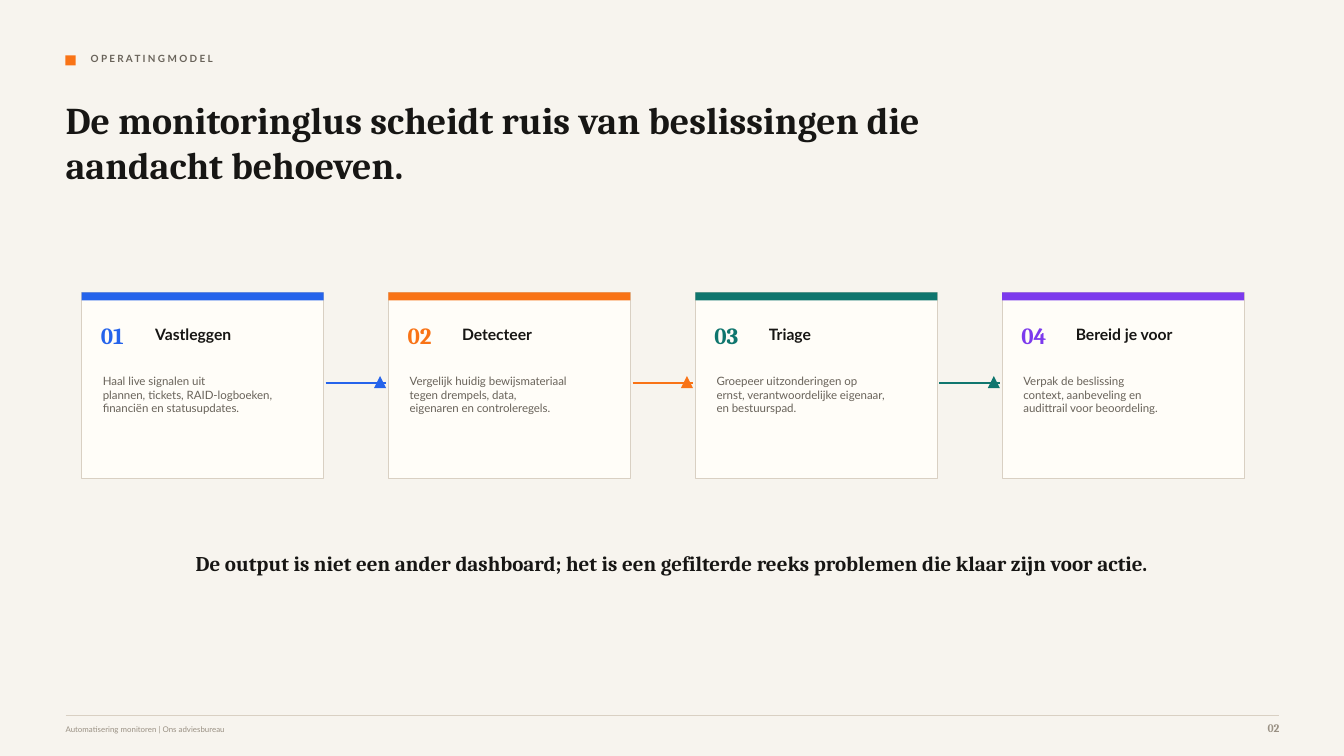
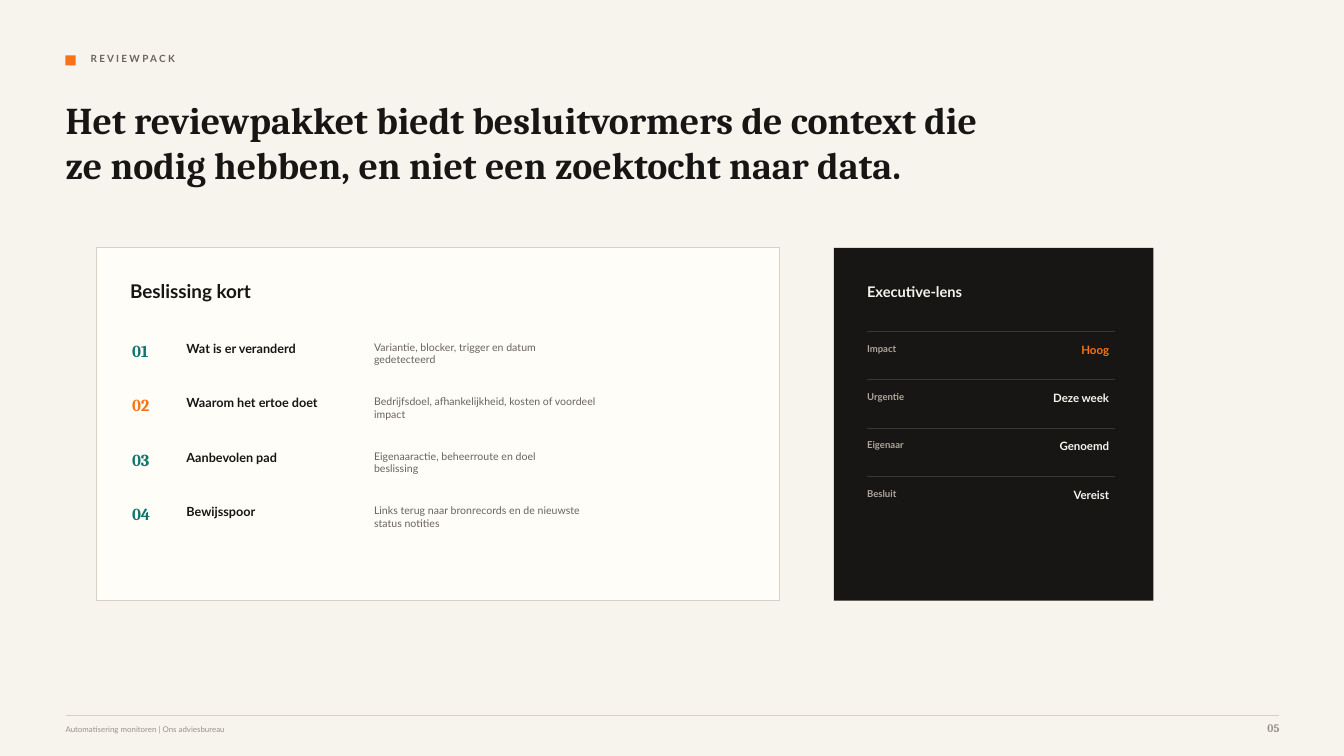
from dataclasses import dataclass

from lxml import etree
from pptx import Presentation
from pptx.dml.color import RGBColor
from pptx.enum.shapes import MSO_CONNECTOR, MSO_SHAPE
from pptx.enum.text import PP_ALIGN
from pptx.oxml.ns import qn
from pptx.slide import Slide
from pptx.util import Inches, Pt

RECT, TRIANGLE = MSO_SHAPE.RECTANGLE, MSO_SHAPE.ISOSCELES_TRIANGLE
STRAIGHT = MSO_CONNECTOR.STRAIGHT
LEFT, CENTER, RIGHT = PP_ALIGN.LEFT, PP_ALIGN.CENTER, PP_ALIGN.RIGHT

SERIF, SANS = "Cambria", "Lato"
PAPER, CARD, INK = "F7F4EE", "FFFDF8", "171614"
MUTED, FAINT, BORDER = "69635A", "9A9184", "D9D0C3"
LENS_LABEL, LENS_RULE = "AFA79B", "3C362E"
BLUE, ORANGE, GREEN, PURPLE = "2563EB", "F97316", "0F766E", "7C3AED"

MARGIN, CONTENT_W = 0.65, 12.04
FOOTER = "Automatisering monitoren | Ons adviesbureau"


@dataclass(frozen=True)
class Style:
    size: float
    font: str
    color: str
    bold: bool = True
    align: PP_ALIGN = LEFT


@dataclass(frozen=True)
class Step:
    name: str
    detail: str
    color: str


@dataclass(frozen=True)
class Question:
    name: str
    detail: str
    color: str = GREEN


@dataclass(frozen=True)
class Measure:
    label: str
    value: str
    color: str = PAPER


KICKER = Style(7.1, SANS, MUTED)
TITLE = Style(27, SERIF, INK)
FOOTER_TEXT = Style(5.6, SANS, FAINT, bold=False)
PAGE_NUMBER = Style(8.2, SERIF, FAINT, align=RIGHT)

STEPS = [
    Step("Vastleggen", "Haal live signalen uit\nplannen, tickets, RAID-logboeken,\n"
         "financiën en statusupdates.", BLUE),
    Step("Detecteer", "Vergelijk huidig bewijsmateriaal\ntegen drempels, data,\n"
         "eigenaren en controleregels.", ORANGE),
    Step("Triage", "Groepeer uitzonderingen op\nernst, verantwoordelijke eigenaar,\n"
         "en bestuurspad.", GREEN),
    Step("Bereid je voor", "Verpak de beslissing\ncontext, aanbeveling en\n"
         "audittrail voor beoordeling.", PURPLE),
]
QUESTIONS = [
    Question("Wat is er veranderd", "Variantie, blocker, trigger en datum\ngedetecteerd"),
    Question("Waarom het ertoe doet",
             "Bedrijfsdoel, afhankelijkheid, kosten of voordeel\nimpact", ORANGE),
    Question("Aanbevolen pad", "Eigenaaractie, beheerroute en doel\nbeslissing"),
    Question("Bewijsspoor", "Links terug naar bronrecords en de nieuwste\nstatus notities"),
]
MEASURES = [
    Measure("Impact", "Hoog", ORANGE),
    Measure("Urgentie", "Deze week"),
    Measure("Eigenaar", "Genoemd"),
    Measure("Besluit", "Vereist"),
]


def rgb(color: str) -> RGBColor:
    return RGBColor.from_string(color)


def add_block(s: Slide, x: float, y: float, w: float, h: float, fill: str,
              border: str | None = None, shape: MSO_SHAPE = RECT) -> None:
    sp = s.shapes.add_shape(shape, Inches(x), Inches(y), Inches(w), Inches(h))
    sp.shadow.inherit = False
    sp.fill.solid()
    sp.fill.fore_color.rgb = rgb(fill)
    if border:
        sp.line.color.rgb = rgb(border)
        sp.line.width = Pt(0.75)
    else:
        sp.line.fill.background()


def add_rule(s: Slide, x: float, y: float, w: float, color: str,
             weight: float = 0.75) -> None:
    """Draw a horizontal line without a shadow."""
    line = s.shapes.add_connector(STRAIGHT, Inches(x), Inches(y), Inches(x + w), Inches(y))
    line.line.color.rgb = rgb(color)
    line.line.width = Pt(weight)
    etree.SubElement(line._element.spPr, qn("a:effectLst"))


def add_text(s: Slide, x: float, y: float, w: float, h: float, text: str,
             style: Style) -> None:
    """Add a text box; each line of the text becomes a paragraph."""
    tf = s.shapes.add_textbox(Inches(x), Inches(y), Inches(w), Inches(h)).text_frame
    tf.margin_left = tf.margin_right = tf.margin_top = tf.margin_bottom = 0
    tf.word_wrap = True
    tf.text = text
    for p in tf.paragraphs:
        p.alignment = style.align
        for r in p.runs:
            r.font.size = Pt(style.size)
            r.font.name = style.font
            r.font.bold = style.bold
            r.font.color.rgb = rgb(style.color)


def add_frame(prs: Presentation, kicker: str, title: str, page: int) -> Slide:
    """Add a slide with the shared background, heading and footer."""
    s = prs.slides.add_slide(prs.slide_layouts[6])
    s.background.fill.solid()
    s.background.fill.fore_color.rgb = rgb(PAPER)
    add_block(s, MARGIN, 0.55, 0.1, 0.1, ORANGE)
    add_text(s, 0.9, 0.52, 5.42, 0.19, " ".join(kicker), KICKER)
    add_text(s, MARGIN, 0.96, 9.48, 1.08, title, TITLE)
    add_rule(s, MARGIN, 7.1, CONTENT_W, BORDER)
    add_text(s, MARGIN, 7.19, 7.92, 0.15, FOOTER, FOOTER_TEXT)
    add_text(s, MARGIN + CONTENT_W - 0.5, 7.15, 0.5, 0.19, f"{page:02}", PAGE_NUMBER)
    return s


def add_step(s: Slide, x: float, number: int, step: Step) -> None:
    top, width = 2.9, 2.4
    add_block(s, x, top, width, 1.85, CARD, BORDER)
    add_block(s, x, top, width, 0.08, step.color)
    add_text(s, x + 0.19, 3.19, 0.46, 0.29, f"{number:02}", Style(16.5, SERIF, step.color))
    add_text(s, x + 0.73, 3.22, 1.33, 0.21, step.name, Style(11.2, SANS, INK))
    add_text(s, x + 0.21, 3.71, 1.92, 0.71, step.detail, Style(8.2, SANS, MUTED, bold=False))
    if number < len(STEPS):
        add_rule(s, x + width + 0.02, 3.8, 0.6, step.color, 1.75)
        add_block(s, x + width + 0.5, 3.73, 0.12, 0.12, step.color, shape=TRIANGLE)


def add_loop_slide(prs: Presentation) -> None:
    s = add_frame(prs, "OPERATINGMODEL",
                  "De monitoringlus scheidt ruis van beslissingen die aandacht behoeven.", 2)
    first, last = 0.81, 9.94
    pitch = (last - first) / (len(STEPS) - 1)
    for i, step in enumerate(STEPS):
        add_step(s, first + i * pitch, i + 1, step)
    add_text(s, 1.77, 5.46, 9.79, 0.44,
             "De output is niet een ander dashboard; het is een gefilterde reeks "
             "problemen die klaar zijn voor actie.", Style(15, SERIF, INK, align=CENTER))


def add_decision_card(s: Slide, top: float, height: float) -> None:
    add_block(s, 0.96, top, 6.77, height, CARD, BORDER)
    add_text(s, 1.29, 2.77, 2.71, 0.25, "Beslissing kort", Style(13.5, SANS, INK))
    for i, question in enumerate(QUESTIONS):
        y = 3.38 + i * 0.54
        add_text(s, 1.31, y, 0.35, 0.25, f"{i + 1:02}", Style(12, SERIF, question.color))
        add_text(s, 1.85, y, 1.73, 0.19, question.name, Style(9, SANS, INK))
        add_text(s, 3.71, y, 3.12, 0.31, question.detail, Style(7.5, SANS, MUTED, bold=False))


def add_executive_lens(s: Slide, top: float, height: float) -> None:
    left = 8.6
    add_block(s, 8.27, top, 3.17, height, INK)
    add_text(s, left, 2.81, 1.88, 0.21, "Executive-lens", Style(10.5, SANS, PAPER))
    for i, measure in enumerate(MEASURES):
        y = 3.29 + i * 0.48
        add_rule(s, left, y, 2.46, LENS_RULE)
        add_text(s, left, y + 0.11, 0.96, 0.17, measure.label, Style(6.8, SANS, LENS_LABEL))
        add_text(s, left + 1.25, y + 0.11, 1.15, 0.17, measure.value,
                 Style(8.2, SANS, measure.color, align=RIGHT))


def add_review_slide(prs: Presentation) -> None:
    s = add_frame(prs, "REVIEWPACK",
                  "Het reviewpakket biedt besluitvormers de context die ze nodig hebben, "
                  "en niet een zoektocht naar data.", 5)
    top, height = 2.46, 3.5
    add_decision_card(s, top, height)
    add_executive_lens(s, top, height)


def main() -> None:
    prs = Presentation()
    prs.slide_width, prs.slide_height = Inches(13.33), Inches(7.5)
    add_loop_slide(prs)
    add_review_slide(prs)
    prs.save("out.pptx")


if __name__ == "__main__":
    main()
